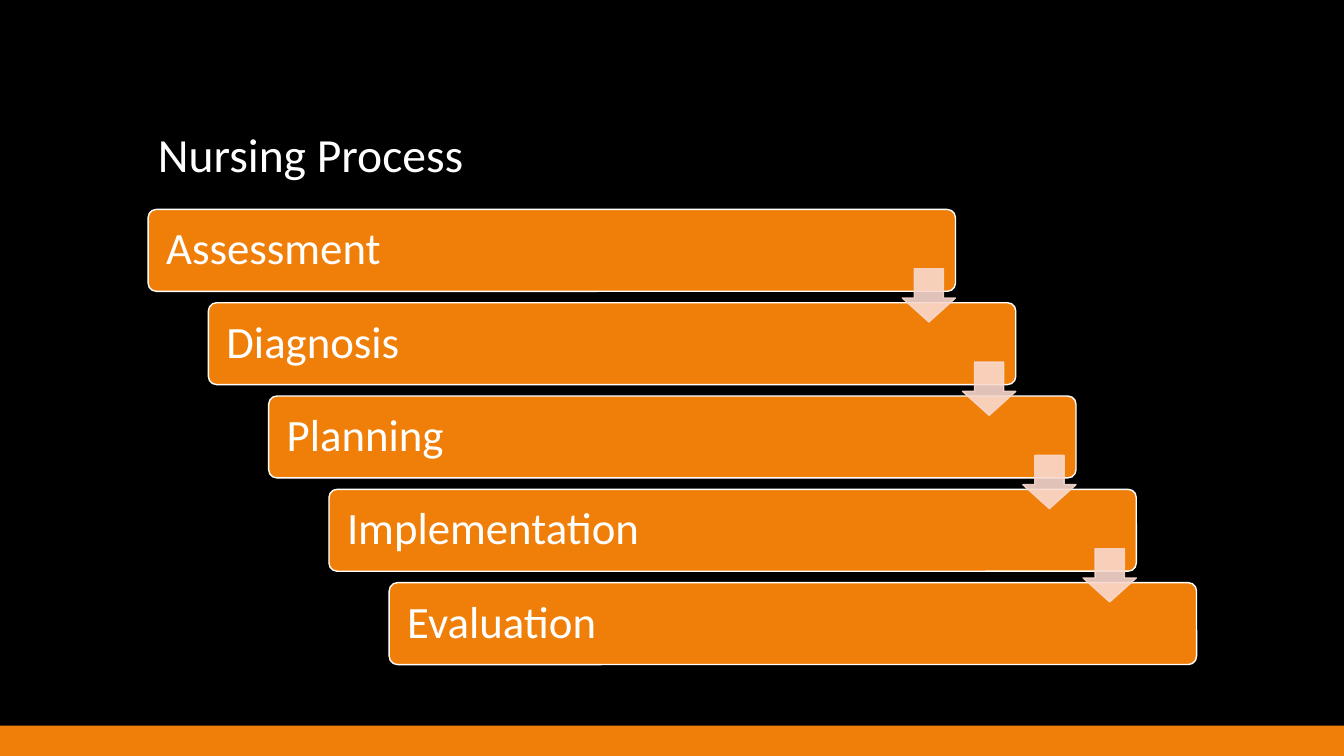
import pptx
import pptx.dml.color
import pptx.enum.shapes
import pptx.enum.text
import pptx.oxml
import pptx.oxml.ns
import pptx.util

TITLE = "Nursing Process"
STEPS = ["Assessment", "Diagnosis", "Planning", "Implementation", "Evaluation"]

COLORS = {"back": "000000", "bar": "F07F09", "text": "FFFFFF", "arrow": "F9D8CC"}
FONT = "Calibri"
WIDE, HIGH = 960, 540
LEFT, TOP = 105.8, 149.6
BAR_W, BAR_H = 576.7, 58.5
STEP_X, STEP_Y = 43.05, 66.65
ARROW, DROP = 38, 42.4
FOOT = 21.6

Pt = pptx.util.Pt
KIND = pptx.enum.shapes.MSO_SHAPE
ANCHOR = pptx.enum.text.MSO_ANCHOR


def color(name):
    return pptx.dml.color.RGBColor.from_string(COLORS[name])


def draw(slide, kind, box, fill, line=None, adjust=()):
    shape = slide.shapes.add_shape(kind, *map(Pt, box))
    shape.shadow.inherit = False
    for index, value in enumerate(adjust):
        shape.adjustments[index] = value
    shape.fill.solid()
    shape.fill.fore_color.rgb = color(fill)
    if line:
        shape.line.color.rgb = color(line)
        shape.line.width = Pt(1)
    else:
        shape.line.fill.background()
    return shape


def write(shape, text, size, anchor, inset):
    frame = shape.text_frame
    frame.word_wrap = True
    frame.vertical_anchor = anchor
    frame.margin_left = frame.margin_right = Pt(inset)
    par = frame.paragraphs[0]
    par.alignment = pptx.enum.text.PP_ALIGN.LEFT
    par.line_spacing = 0.9
    run = par.add_run()
    run.text = text
    run.font.name = FONT
    run.font.size = Pt(size)
    run.font.color.rgb = color("text")


def fade(shape, percent):
    """Set the opacity of the fill and the line."""
    for node in shape.element.spPr.iter(pptx.oxml.ns.qn("a:srgbClr")):
        alpha = pptx.oxml.parse_xml(f"<a:alpha {pptx.oxml.ns.nsdecls('a')}/>")
        alpha.set("val", str(percent * 1000))
        node.append(alpha)


def main():
    deck = pptx.Presentation()
    deck.slide_width, deck.slide_height = Pt(WIDE), Pt(HIGH)
    slide = deck.slides.add_slide(deck.slide_layouts[6])
    slide.background.fill.solid()
    slide.background.fill.fore_color.rgb = color("back")

    draw(slide, KIND.RECTANGLE, (0, HIGH - FOOT, WIDE, FOOT), "bar")
    title = slide.shapes.add_textbox(Pt(LEFT), Pt(36.7), Pt(748.8), Pt(97.2))
    write(title, TITLE, 34, ANCHOR.BOTTOM, 7.2)

    spots = [(LEFT + i * STEP_X, TOP + i * STEP_Y) for i in range(len(STEPS))]
    for (x, y), name in zip(spots, STEPS):
        bar = draw(slide, KIND.ROUNDED_RECTANGLE, (x, y, BAR_W, BAR_H),
                   "bar", "text", [0.1])
        write(bar, name, 32, ANCHOR.MIDDLE, 11.2)
    for x, y in spots[:-1]:
        box = (x + BAR_W - ARROW, y + DROP, ARROW, ARROW)
        arrow = draw(slide, KIND.DOWN_ARROW, box, "arrow", "arrow", [0.55, 0.45])
        fade(arrow, 90)

    deck.save("out.pptx")


if __name__ == "__main__":
    main()
